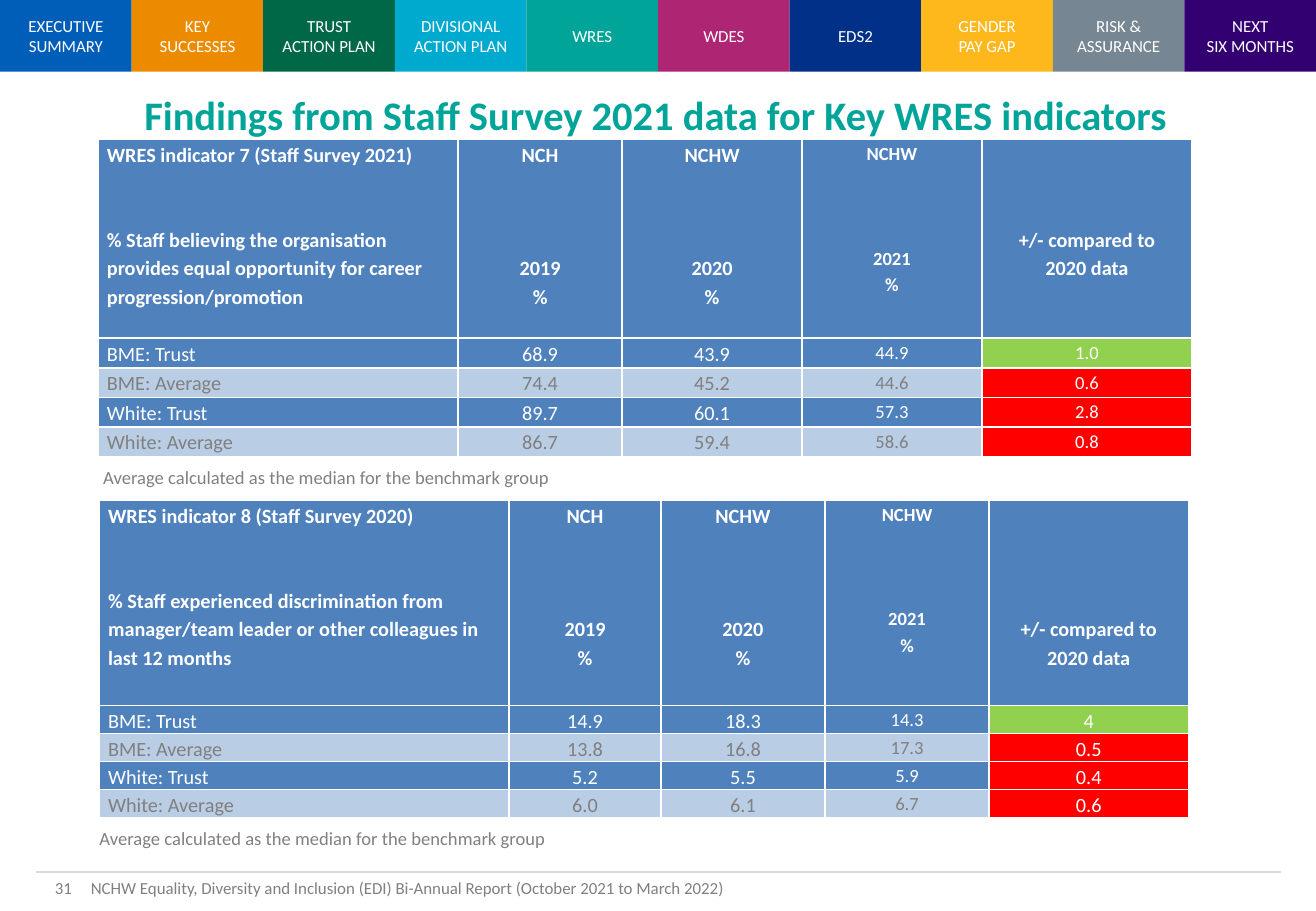
from lxml.etree import SubElement
from pptx import Presentation
from pptx.dml.color import RGBColor
from pptx.enum.shapes import MSO_CONNECTOR, MSO_SHAPE
from pptx.enum.text import MSO_ANCHOR, PP_ALIGN
from pptx.oxml import parse_xml
from pptx.oxml.ns import nsdecls, qn
from pptx.util import Inches, Pt

WHITE = RGBColor(0xFF, 0xFF, 0xFF)
GREY = RGBColor(0x80, 0x80, 0x80)
RULE = RGBColor(0xD9, 0xD9, 0xD9)
TEAL = RGBColor(0x00, 0xA4, 0x99)
BLUE = RGBColor(0x4F, 0x81, 0xBD)
PALE = RGBColor(0xB9, 0xCD, 0xE5)
GREEN = RGBColor(0x92, 0xD0, 0x50)
RED = RGBColor(0xFF, 0x00, 0x00)

TABS = [
    (["EXECUTIVE SUMMARY"], RGBColor(0x00, 0x5E, 0xB8)),
    (["KEY", "SUCCESSES"], RGBColor(0xED, 0x8B, 0x00)),
    (["TRUST", "ACTION PLAN"], RGBColor(0x00, 0x67, 0x47)),
    (["DIVISIONAL", "ACTION PLAN"], RGBColor(0x00, 0xA9, 0xCE)),
    (["WRES"], TEAL),
    (["WDES"], RGBColor(0xAE, 0x25, 0x73)),
    (["EDS2"], RGBColor(0x00, 0x30, 0x87)),
    (["GENDER", "PAY GAP"], RGBColor(0xFF, 0xB8, 0x1C)),
    (["RISK & ASSURANCE"], RGBColor(0x76, 0x86, 0x92)),
    (["NEXT", "SIX MONTHS"], RGBColor(0x33, 0x00, 0x72)),
]
GROUPS = ["BME: Trust", "BME: Average", "White: Trust", "White: Average"]
YEARS = [("NCH", "2019", 12), ("NCHW", "2020", 12), ("NCHW", "2021", 11)]
CAREER = [
    ["68.9", "43.9", "44.9", "1.0"],
    ["74.4", "45.2", "44.6", "0.6"],
    ["89.7", "60.1", "57.3", "2.8"],
    ["86.7", "59.4", "58.6", "0.8"],
]
DISCRIMINATION = [
    ["14.9", "18.3", "14.3", "4"],
    ["13.8", "16.8", "17.3", "0.5"],
    ["5.2", "5.5", "5.9", "0.4"],
    ["6.0", "6.1", "6.7", "0.6"],
]
NOTE = "Average calculated as the median for the benchmark group"


class Deck:
    font = "Calibri"
    spacing = 1.15
    line_height = 1.4

    def __init__(self, width, height):
        self.prs = Presentation()
        self.prs.slide_width, self.prs.slide_height = Inches(width), Inches(height)
        self.col, self.row = Inches(width) / 100, Inches(height) / 100
        self.s = self.prs.slides.add_slide(self.prs.slide_layouts[6])

    def x(self, cols):
        return round(cols * self.col)

    def y(self, rows):
        return round(rows * self.row)

    def box(self, left, top, width, height):
        return self.x(left), self.y(top), self.x(width), self.y(height)

    def paragraphs(self, tf, lines, size, color, bold=False, align=PP_ALIGN.LEFT):
        for i, line in enumerate(lines):
            p = tf.paragraphs[0] if i == 0 else tf.add_paragraph()
            p.text, p.alignment = line, align
            p.font.name, p.font.size, p.font.bold = self.font, Pt(size), bold
            p.font.color.rgb = color

    def text(self, line, place, size, color=GREY, bold=False, wrap=True,
             align=PP_ALIGN.LEFT, anchor=MSO_ANCHOR.TOP):
        tf = self.s.shapes.add_textbox(*self.box(*place)).text_frame
        tf.word_wrap, tf.vertical_anchor = wrap, anchor
        self.paragraphs(tf, [line], size, color, bold, align)

    def tab(self, lines, place, fill):
        sp = self.s.shapes.add_shape(MSO_SHAPE.RECTANGLE, *self.box(*place))
        sp.shadow.inherit = False
        sp.fill.solid()
        sp.fill.fore_color.rgb = fill
        sp.line.fill.background()
        sp.text_frame.vertical_anchor = MSO_ANCHOR.MIDDLE
        self.paragraphs(sp.text_frame, lines, 10, WHITE, align=PP_ALIGN.CENTER)

    def rule(self, left, right, top):
        cx = self.s.shapes.add_connector(
            MSO_CONNECTOR.STRAIGHT, self.x(left), self.y(top), self.x(right), self.y(top))
        cx.line.color.rgb, cx.line.width = RULE, Pt(0.75)
        SubElement(cx._element.spPr, qn("a:effectLst"))

    def cell(self, cell, lines, size, fill, color=WHITE, bold=False,
             align=PP_ALIGN.CENTER, gap=0, offset=0):
        line = size * self.line_height
        cell.margin_left = cell.margin_right = Inches(0.07)
        cell.margin_top, cell.margin_bottom = Pt(offset * line), 0
        self.paragraphs(cell.text_frame, lines, size, color, bold, align)
        for p in cell.text_frame.paragraphs:
            p.line_spacing = self.spacing
        if gap:
            cell.text_frame.paragraphs[1].space_before = Pt(gap * line)
        cell.fill.solid()
        cell.fill.fore_color.rgb = fill
        tcPr = cell._tc.get_or_add_tcPr()
        for i, side in enumerate("LRTB"):
            tcPr.insert(i, parse_xml(
                f'<a:ln{side} {nsdecls("a")} w="12700"><a:solidFill>'
                f'<a:srgbClr val="{WHITE}"/></a:solidFill></a:ln{side}>'))

    def table(self, left, top, widths, head, body, title, question, values,
              change_size, change_offset):
        place = self.box(left, top, sum(widths), head + body * len(values))
        tbl = self.s.shapes.add_table(len(values) + 1, len(widths), *place).table
        for column, width in zip(tbl.columns, widths):
            column.width = self.x(width)
        for i, row in enumerate(tbl.rows):
            row.height = self.y(body if i else head)

        self.cell(tbl.cell(0, 0), [title, question], 12, BLUE, bold=True,
                  align=PP_ALIGN.LEFT, gap=2)
        for c, (trust, year, size) in enumerate(YEARS, 1):
            self.cell(tbl.cell(0, c), [trust, year, "%"], size, BLUE, bold=True, gap=3)
        self.cell(tbl.cell(0, 4), ["+/- compared to", "2020 data"], 12, BLUE,
                  bold=True, offset=change_offset)

        sizes = [size for _, _, size in YEARS]
        for r, (group, (*scores, change)) in enumerate(zip(GROUPS, values), 1):
            fill, color = (BLUE, WHITE) if r % 2 else (PALE, GREY)
            self.cell(tbl.cell(r, 0), [group], 12, fill, color, align=PP_ALIGN.LEFT)
            for c, (score, size) in enumerate(zip(scores, sizes), 1):
                self.cell(tbl.cell(r, c), [score], size, fill, color)
            self.cell(tbl.cell(r, 4), [change], change_size, GREEN if r == 1 else RED)


def main():
    deck = Deck(10.83, 7.5)
    deck.rule(2.77, 97.32, 95.73)
    tab_width = 100 / len(TABS)
    for i, (lines, fill) in enumerate(TABS):
        deck.tab(lines, (i * tab_width, 0, tab_width, 7.87), fill)
    deck.text("NCHW Equality, Diversity and Inclusion (EDI) Bi-Annual Report "
              "(October 2021 to March 2022)", (6, 95.73, 78.49, 3.6), 10)
    deck.text("31", (0.74, 95.07, 5.63, 4.8), 10,
              align=PP_ALIGN.RIGHT, anchor=MSO_ANCHOR.MIDDLE)
    deck.text("Findings from Staff Survey 2021 data for Key WRES indicators",
              (10.06, 9.2, 80.42, 6.67), 24, TEAL, bold=True, wrap=False)
    deck.table(7.48, 15.33, [27.33, 12.47, 13.67, 13.67, 15.97], 21.8, 3.25,
               "WRES indicator 7 (Staff Survey 2021)",
               "% Staff believing the organisation provides equal opportunity "
               "for career progression/promotion", CAREER, 11, 3)
    deck.text(NOTE, (6.93, 50.53, 60, 3.87), 11)
    deck.table(7.57, 54.93, [31.12, 11.54, 12.47, 12.47, 15.14], 22.5, 2.96,
               "WRES indicator 8 (Staff Survey 2020)",
               "% Staff experienced discrimination from manager/team leader "
               "or other colleagues in last 12 months", DISCRIMINATION, 12, 4)
    deck.text(NOTE, (6.65, 90.13, 60, 3.87), 11)
    deck.prs.save("out.pptx")


if __name__ == "__main__":
    main()
